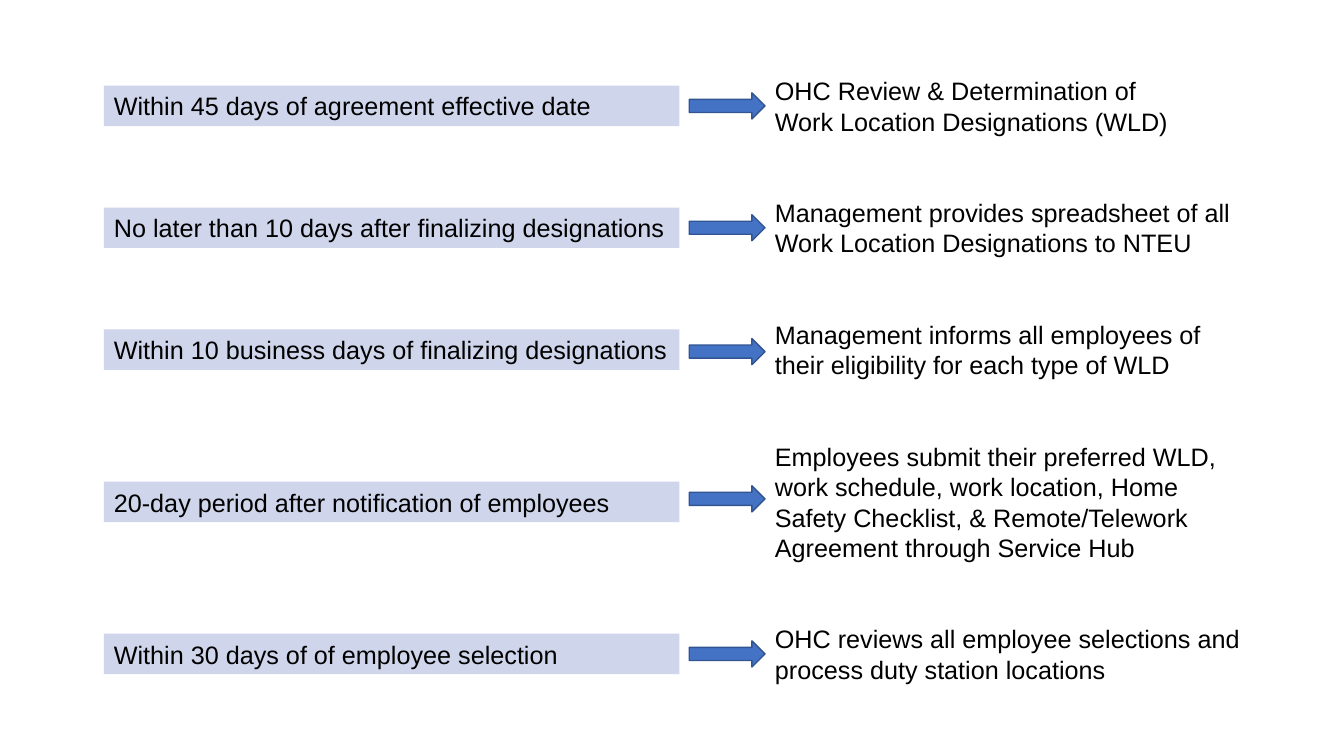
"""Build a slide pairing each designation deadline with the action it triggers."""
from pptx import Presentation
from pptx.dml.color import RGBColor
from pptx.enum.shapes import MSO_SHAPE
from pptx.enum.text import MSO_ANCHOR, MSO_AUTO_SIZE, PP_ALIGN
from pptx.util import Cm, Pt

RECTANGLE = MSO_SHAPE.RECTANGLE
RIGHT_ARROW = MSO_SHAPE.RIGHT_ARROW
MIDDLE = MSO_ANCHOR.MIDDLE
GROW = MSO_AUTO_SIZE.SHAPE_TO_FIT_TEXT
LEFT = PP_ALIGN.LEFT

BLACK = RGBColor(0x00, 0x00, 0x00)
WHITE = RGBColor(0xFF, 0xFF, 0xFF)
LAVENDER = RGBColor(0xCF, 0xD5, 0xEA)
BLUE = RGBColor(0x44, 0x72, 0xC4)
DARK_BLUE = RGBColor(0x32, 0x54, 0x91)

STEPS = [
    (2.67, 2.67, 10.92, 1.8, "Within 45 days of agreement effective date",
     "OHC Review & Determination of Work Location Designations (WLD)"),
    (5.74, 5.74, 12.22, 1.8, "No later than 10 days after finalizing designations",
     "Management provides spreadsheet of all Work Location Designations to NTEU"),
    (8.81, 8.86, 12.22, 1.8, "Within 10 business days of finalizing designations",
     "Management informs all employees of their eligibility for each type of WLD"),
    (12.65, 12.57, 12.22, 3.33, "20-day period after notification of employees",
     "Employees submit their preferred WLD, work schedule, work location, "
     "Home Safety Checklist, & Remote/Telework Agreement through Service Hub"),
    (16.48, 16.48, 12.22, 1.8, "Within 30 days of of employee selection",
     "OHC reviews all employee selections and process duty station locations"),
]

presentation = Presentation()
presentation.slide_width = Cm(33.87)
presentation.slide_height = Cm(19.05)
slide = presentation.slides.add_slide(presentation.slide_layouts[6])


def add_block(kind, left, middle, width, height, color):
    block = slide.shapes.add_shape(
        kind, Cm(left), Cm(middle - height / 2), Cm(width), Cm(height))
    block.shadow.inherit = False
    block.fill.solid()
    block.fill.fore_color.rgb = color
    return block


def add_label(left, middle, width, height, color, wording):
    label = add_block(RECTANGLE, left, middle, width, height, color)
    label.line.fill.background()
    frame = label.text_frame
    frame.word_wrap = True
    frame.auto_size = GROW
    frame.vertical_anchor = MIDDLE
    paragraph = frame.paragraphs[0]
    paragraph.alignment = LEFT
    run = paragraph.add_run()
    run.text = wording
    run.font.name = "Arial"
    run.font.size = Pt(18)
    run.font.color.rgb = BLACK


for middle, arrow_middle, action_width, action_height, deadline, action in STEPS:
    add_label(2.62, middle, 14.5, 1.02, LAVENDER, deadline)
    add_label(19.28, middle, action_width, action_height, WHITE, action)
    arrow = add_block(RIGHT_ARROW, 17.37, arrow_middle, 1.91, 0.66, BLUE)
    arrow.line.color.rgb = DARK_BLUE
    arrow.line.width = Pt(1)

presentation.save("out.pptx")
